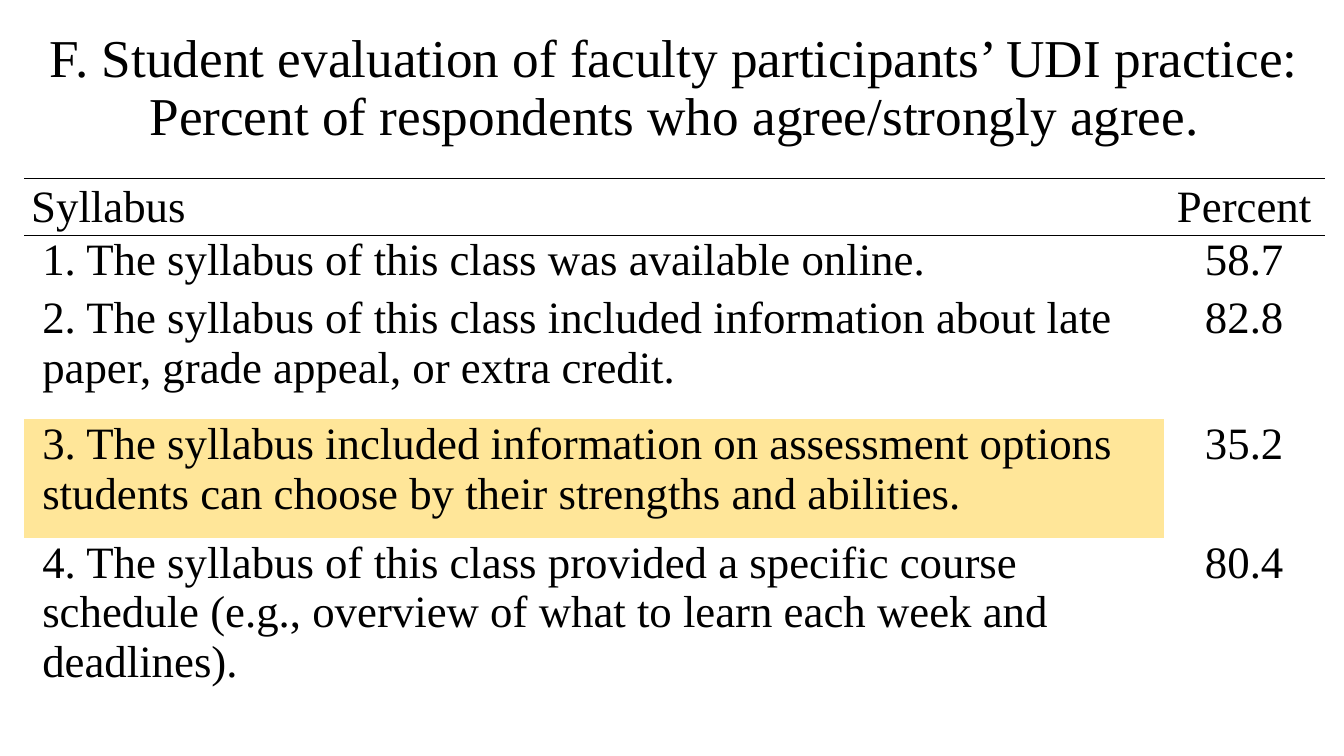
from lxml import etree
from pptx import Presentation
from pptx import util as u
from pptx.dml.color import RGBColor
from pptx.enum import text
from pptx.oxml import ns

FONT = "Times New Roman"
BLACK, WHITE, HIGHLIGHT = "000000", "FFFFFF", "FFE699"
NO_GRID_STYLE = "{2D5ABB26-0587-4C30-8999-92F81FD0307C}"

TITLE = ("F. Student evaluation of faculty participants’ UDI practice: "
         "Percent of respondents who agree/strongly agree.")
HEADER = ("Syllabus", "Percent")
ITEMS = [
    ("1. The syllabus of this class was available online.", "58.7"),
    ("2. The syllabus of this class included information about late paper, "
     "grade appeal, or extra credit.", "82.8"),
    ("3. The syllabus included information on assessment options students "
     "can choose by their strengths and abilities.", "35.2"),
    ("4. The syllabus of this class provided a specific course schedule "
     "(e.g., overview of what to learn each week and deadlines).", "80.4"),
]
HIGHLIGHTED_ROW = 3
COLUMN_WIDTHS = (11.3, 1.6)
ROW_HEIGHTS = (0.57, 0.57, 1.25, 1.18, 1.7)


def color(code):
    return RGBColor.from_string(code)


def format_text(para, size):
    for span in para.runs:
        span.font.name = FONT
        span.font.size = u.Pt(size)
        span.font.color.rgb = color(BLACK)


def add_rule(cell, side):
    """Draw a thin line on one side of a cell: "T" or "B"."""
    line = etree.SubElement(cell._tc.get_or_add_tcPr(), ns.qn(f"a:ln{side}"),
                            w=str(u.Pt(1)))
    fill = etree.SubElement(line, ns.qn("a:solidFill"))
    etree.SubElement(fill, ns.qn("a:srgbClr"), val=BLACK)


def place_title(page, left, top, width, height):
    box = page.shapes.title
    box.left, box.top = u.Inches(left), u.Inches(top)
    box.width, box.height = u.Inches(width), u.Inches(height)
    frame = box.text_frame
    frame.text = TITLE
    frame.word_wrap = True
    frame.auto_size = text.MSO_AUTO_SIZE.NONE
    frame.vertical_anchor = text.MSO_ANCHOR.MIDDLE
    para = frame.paragraphs[0]
    para.alignment = text.PP_ALIGN.CENTER
    para.line_spacing = 0.9
    format_text(para, 38)


def fill_cell(cell, words, row, column):
    cell.margin_left = cell.margin_right = u.Inches(0.07)
    cell.margin_top = cell.margin_bottom = 0
    cell.text = words
    para = cell.text_frame.paragraphs[0]
    para.alignment = text.PP_ALIGN.CENTER if column else text.PP_ALIGN.LEFT
    if row == 0:
        cell.vertical_anchor = text.MSO_ANCHOR.MIDDLE
        add_rule(cell, "T")
        add_rule(cell, "B")
    else:
        para.space_before = para.space_after = u.Pt(3)
        if column == 0:
            para._p.get_or_add_pPr().set("marL", str(u.Inches(0.11)))
    format_text(para, 32)
    highlighted = row == HIGHLIGHTED_ROW and column == 0
    cell.fill.solid()
    cell.fill.fore_color.rgb = color(HIGHLIGHT if highlighted else WHITE)


def place_table(page, left, top, width, height):
    rows = [HEADER, *ITEMS]
    table = page.shapes.add_table(
        len(rows), len(HEADER), u.Inches(left), u.Inches(top),
        u.Inches(width), u.Inches(height)).table
    table.first_row = table.horz_banding = False
    table._tbl.tblPr.find(ns.qn("a:tableStyleId")).text = NO_GRID_STYLE
    for column, column_width in zip(table.columns, COLUMN_WIDTHS):
        column.width = u.Inches(column_width)
    for row, row_height in zip(table.rows, ROW_HEIGHTS):
        row.height = u.Inches(row_height)
    for row, values in enumerate(rows):
        for column, words in enumerate(values):
            fill_cell(table.cell(row, column), words, row, column)


def main():
    deck = Presentation()
    deck.slide_width, deck.slide_height = u.Inches(13.33), u.Inches(7.5)
    page = deck.slides.add_slide(deck.slide_layouts[5])
    left, width, title_height = 0.24, sum(COLUMN_WIDTHS), 1.77
    place_title(page, left, 0, width, title_height)
    place_table(page, left, title_height, width, sum(ROW_HEIGHTS))
    deck.save("out.pptx")


if __name__ == "__main__":
    main()
